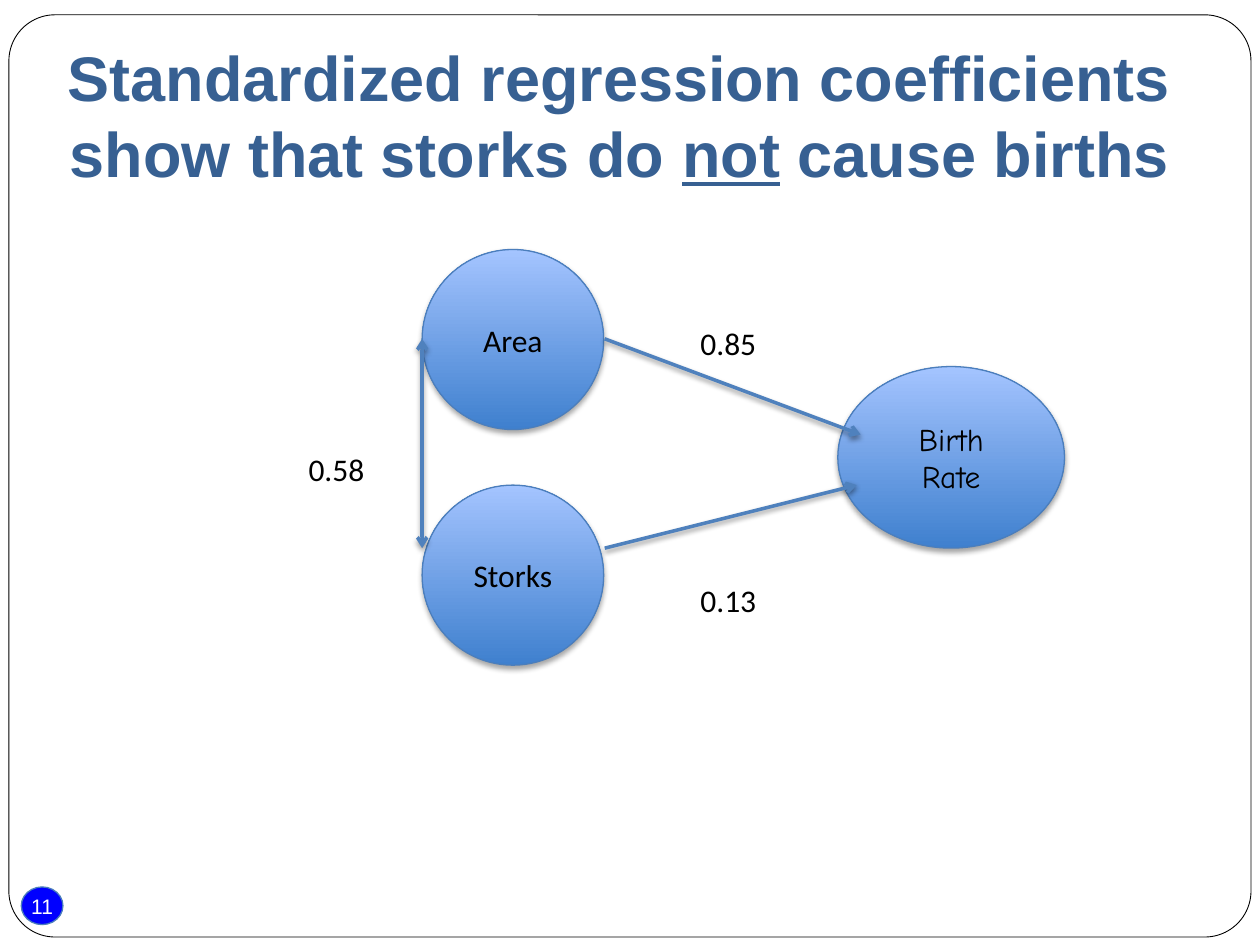
from lxml.etree import SubElement
from pptx import Presentation
from pptx.dml.color import RGBColor
from pptx.enum.shapes import MSO_CONNECTOR, MSO_SHAPE
from pptx.enum.text import MSO_ANCHOR, MSO_AUTO_SIZE, PP_ALIGN
from pptx.oxml.ns import qn
from pptx.util import Cm, Pt

BLACK = RGBColor(0, 0, 0)
WHITE = RGBColor(255, 255, 255)
BADGE = RGBColor(0, 0, 255)
EDGE = RGBColor(0x4B, 0x7E, 0xBC)
ARROW = RGBColor(0x4F, 0x81, 0xBD)
TITLE = RGBColor(0x37, 0x60, 0x92)
DARK = RGBColor(0x3F, 0x80, 0xCE)
LIGHT = RGBColor(0xA4, 0xC4, 0xFF)

HEAD = [("Standardized regression coefficients show that storks do ", False),
        ("not", True), (" cause births", False)]
NODES = [
    (["Birth", "Rate"], "Comic Neue", (16.89, 7.39, 4.57, 3.66)),
    (["Storks"], "Calibri", (8.51, 9.78, 3.66, 3.63)),
    (["Area"], "Calibri", (8.51, 5.03, 3.66, 3.63)),
]
PATHS = [
    ((12.19, 11.05), (17.27, 9.78), ["tailEnd"]),
    ((12.19, 6.83), (17.35, 8.76), ["tailEnd"]),
    ((8.51, 6.83), (8.51, 11.05), ["headEnd", "tailEnd"]),
]
LABELS = [("0.85", 13.87, 6.4), ("0.13", 13.87, 11.58), ("0.58", 5.97, 8.94)]


def cms(vals):
    return [Cm(val) for val in vals]


def stroke(shape, color, width):
    shape.line.color.rgb = color
    shape.line.width = Pt(width)


def shade(list_el, dist, alpha):
    outer = SubElement(list_el, qn("a:outerShdw"), blurRad=str(Pt(3.1)),
                       dist=str(Pt(dist)), dir="5400000", rotWithShape="0")
    color = SubElement(outer, qn("a:srgbClr"), val="000000")
    SubElement(color, qn("a:alpha"), val=str(alpha * 1000))


def write(frame, lines, face, size, color, align=PP_ALIGN.CENTER):
    frame.vertical_anchor = MSO_ANCHOR.MIDDLE
    for i, line in enumerate(lines):
        para = frame.add_paragraph() if i else frame.paragraphs[0]
        para.text = line
        para.alignment = align
        para.font.name = face
        para.font.size = Pt(size)
        para.font.color.rgb = color


def add_form(slide, kind, box):
    form = slide.shapes.add_shape(kind, *cms(box))
    form.shadow.inherit = False
    return form


def add_frame(slide):
    badge = add_form(slide, MSO_SHAPE.OVAL, (0.43, 17.88, 0.84, 0.76))
    badge.fill.solid()
    badge.fill.fore_color.rgb = BADGE
    stroke(badge, EDGE, 0.75)
    text = badge.text_frame
    text.margin_left = text.margin_right = text.margin_top = text.margin_bottom = 0
    text.word_wrap = False
    write(text, ["11"], "Arial", 12, WHITE)
    border = add_form(slide, MSO_SHAPE.ROUNDED_RECTANGLE, (0.18, 0.3, 25.04, 18.59))
    border.adjustments[0] = 0.05
    border.fill.background()
    stroke(border, BLACK, 0.5)


def add_node(slide, lines, face, box):
    node = add_form(slide, MSO_SHAPE.OVAL, box)
    node.fill.gradient()
    node.fill.gradient_angle = 90
    for stop, color in zip(node.fill.gradient_stops, (DARK, LIGHT)):
        stop.color.rgb = color
    stroke(node, EDGE, 0.75)
    shade(node.element.spPr.find(qn("a:effectLst")), 1.8, 35)
    write(node.text_frame, lines, face, 18, BLACK)


def add_path(slide, start, end, tips):
    path = slide.shapes.add_connector(MSO_CONNECTOR.STRAIGHT, *cms(start + end))
    stroke(path, ARROW, 2)
    props = path.element.spPr
    for tip in tips:
        SubElement(props.find(qn("a:ln")), qn("a:" + tip), type="arrow")
    shade(SubElement(props, qn("a:effectLst")), 1.6, 38)


def add_label(slide, word, left, top):
    text = slide.shapes.add_textbox(*cms((left, top, 1.65, 1.02))).text_frame
    text.word_wrap = False
    text.auto_size = MSO_AUTO_SIZE.SHAPE_TO_FIT_TEXT
    write(text, [word], "Calibri", 18, BLACK, PP_ALIGN.LEFT)


def add_title(slide):
    text = slide.shapes.add_textbox(*cms((0.84, 0.71, 23.29, 3.18))).text_frame
    text.word_wrap = True
    write(text, [""], "Arial", 36, TITLE)
    para = text.paragraphs[0]
    para.font.bold = True
    for words, under in HEAD:
        run = para.add_run()
        run.text = words
        run.font.underline = under


def main():
    deck = Presentation()
    deck.slide_width, deck.slide_height = Cm(25.4), Cm(19.05)
    slide = deck.slides.add_slide(deck.slide_layouts[6])
    add_frame(slide)
    for node in NODES:
        add_node(slide, *node)
    for path in PATHS:
        add_path(slide, *path)
    for label in LABELS:
        add_label(slide, *label)
    add_title(slide)
    deck.save("out.pptx")


if __name__ == "__main__":
    main()
